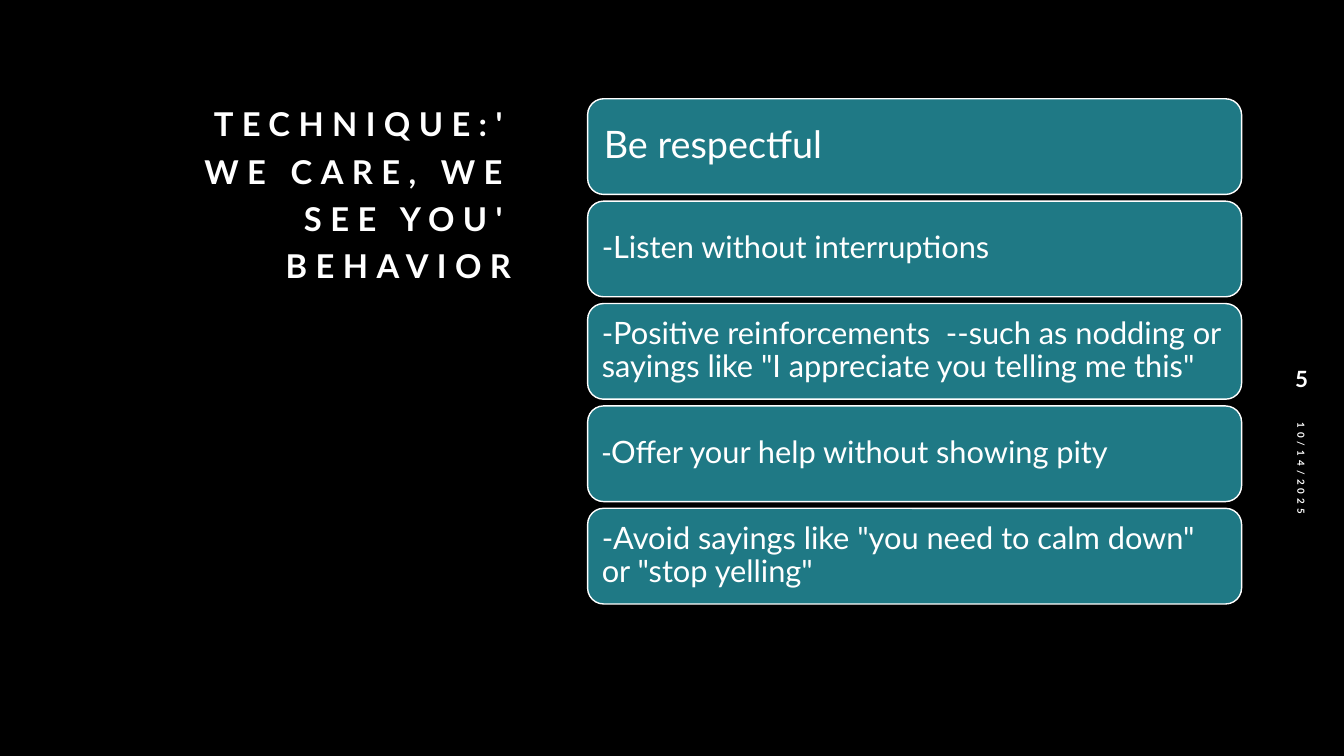
from dataclasses import dataclass

import pptx
import pptx.dml.color
import pptx.enum.shapes
import pptx.enum.text
import pptx.util

Cm = pptx.util.Cm
Pt = pptx.util.Pt
ALIGN = pptx.enum.text.PP_ALIGN
ANCHOR = pptx.enum.text.MSO_ANCHOR

COLORS = {"background": "000000", "card": "1F7985", "text": "FFFFFF"}
FONT = "Lato"
DASH_FONT = "Calibri"

CARD_LEFT, CARD_TOP, CARD_WIDTH, CARD_HEIGHT = 14.81, 2.49, 16.48, 2.41
CARD_STEP = 2.58


@dataclass
class Card:
    text: str
    size: float = 22
    inset: float = 0.36
    dash: str = ""  # leading dash set in its own font


CARDS = [
    Card("Be respectful", size=27, inset=0.41),
    Card("-Listen without interruptions"),
    Card('-Positive reinforcements  --such as nodding or sayings like "I appreciate you telling me this"'),
    Card("Offer your help without showing pity", dash="-"),
    Card('-Avoid sayings like "you need to calm down" or "stop yelling"'),
]


def rgb(name: str) -> pptx.dml.color.RGBColor:
    return pptx.dml.color.RGBColor.from_string(COLORS[name])


def write(shape, text: str, *, size: float, bold: bool = False, align=ALIGN.LEFT,
          anchor=ANCHOR.MIDDLE, line_spacing: float = 1.0, tracking: float = 0,
          dash: str = "") -> None:
    """Fill a shape with one formatted paragraph."""
    frame = shape.text_frame
    frame.word_wrap = True
    frame.vertical_anchor = anchor
    paragraph = frame.paragraphs[0]
    paragraph.alignment = align
    paragraph.line_spacing = line_spacing
    for part, font_name in ((dash, DASH_FONT), (text, FONT)):
        if not part:
            continue
        run = paragraph.add_run()
        run.text = part
        run.font.name = font_name
        run.font.size = Pt(size)
        run.font.bold = bold
        run.font.color.rgb = rgb("text")
        if tracking:
            run._r.get_or_add_rPr().set("spc", str(round(tracking * 100)))


def add_label(slide, left: float, top: float, width: float, height: float):
    return slide.shapes.add_textbox(Cm(left), Cm(top), Cm(width), Cm(height))


def add_card(slide, card: Card, top: float) -> None:
    box = slide.shapes.add_shape(
        pptx.enum.shapes.MSO_SHAPE.ROUNDED_RECTANGLE,
        Cm(CARD_LEFT), Cm(top), Cm(CARD_WIDTH), Cm(CARD_HEIGHT))
    box.shadow.inherit = False
    box.fill.solid()
    box.fill.fore_color.rgb = rgb("card")
    box.line.color.rgb = rgb("text")
    box.line.width = Pt(1)
    frame = box.text_frame
    # The rounded corners already push the text in by 0.12 cm
    frame.margin_left = frame.margin_right = Cm(card.inset - 0.12)
    frame.margin_top = frame.margin_bottom = Cm(0.1)
    write(box, card.text, size=card.size, line_spacing=0.9, dash=card.dash)


def main() -> None:
    deck = pptx.Presentation()
    deck.slide_width, deck.slide_height = Cm(33.87), Cm(19.05)
    slide = deck.slides.add_slide(deck.slide_layouts[6])
    slide.background.fill.solid()
    slide.background.fill.fore_color.rgb = rgb("background")

    # Title
    title = add_label(slide, 4.01, 2.13, 9.12, 5.18)
    write(title, "TECHNIQUE:' WE CARE, WE SEE YOU' BEHAVIOR", size=23.4, bold=True,
          align=ALIGN.RIGHT, anchor=ANCHOR.BOTTOM, line_spacing=1.2, tracking=6)

    # Date and slide number along the right edge
    date = add_label(slide, 29.08, 13.59, 7.42, 1.02)
    date.rotation = 90
    write(date, "10/14/2025", size=7, bold=True, tracking=3)
    slide_number = add_label(slide, 31.93, 8.94, 1.75, 1.19)
    write(slide_number, "5", size=16, bold=True, align=ALIGN.CENTER)

    # Advice cards
    for index, card in enumerate(CARDS):
        add_card(slide, card, CARD_TOP + index * CARD_STEP)

    deck.save("out.pptx")


if __name__ == "__main__":
    main()
